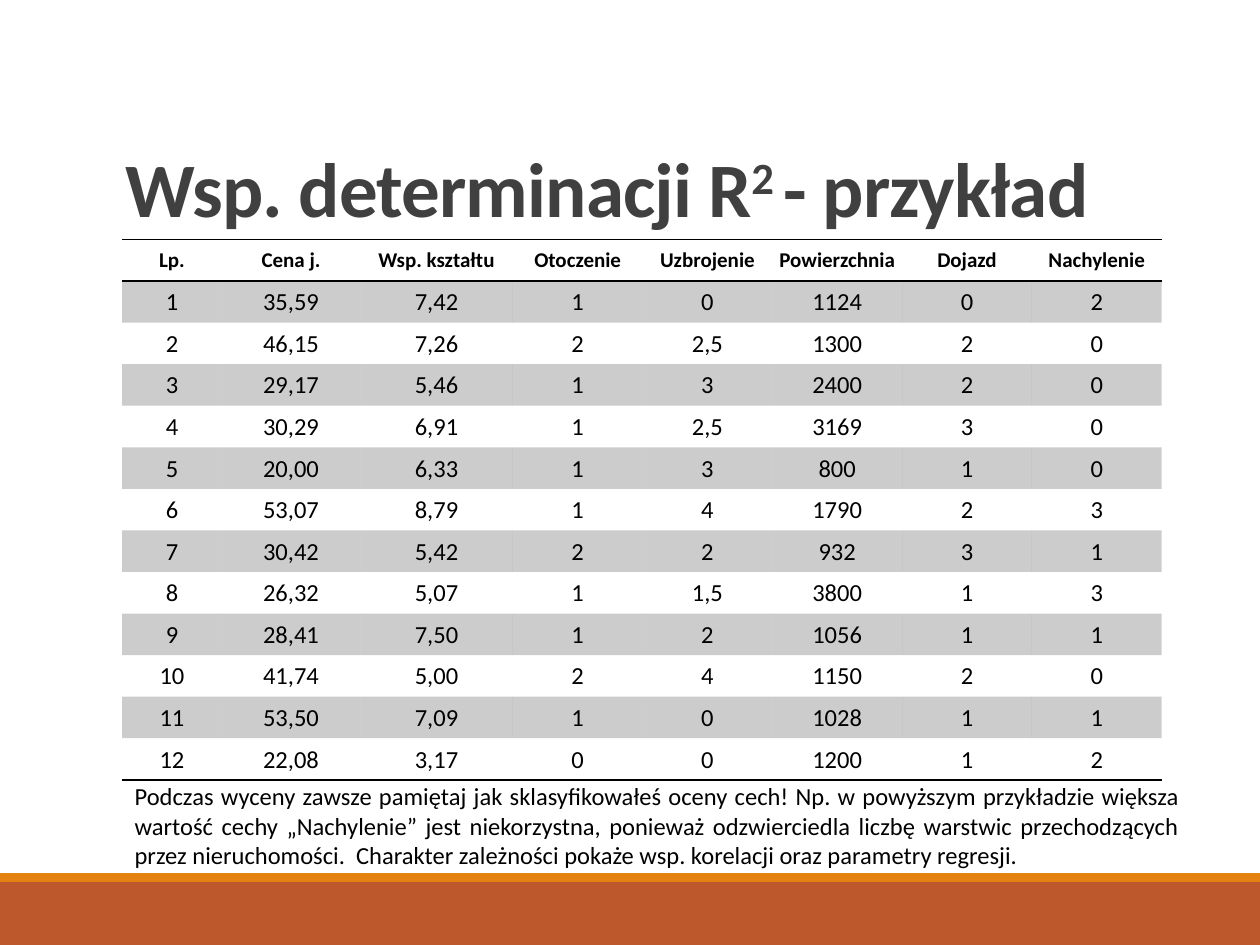
from lxml.etree import SubElement
from pptx import Presentation
from pptx.dml.color import RGBColor
from pptx.enum.shapes import MSO_CONNECTOR, MSO_SHAPE
from pptx.enum.text import MSO_ANCHOR, PP_ALIGN
from pptx.oxml.ns import qn
from pptx.util import Inches, Pt

FONT = "Calibri"
BLACK = "000000"
NO_STYLE = "{2D5ABB26-0587-4C30-8999-92F81FD0307C}"
BANDS = [(7, 0.5, "BD582C"), (6.93, 0.07, "E48312")]
TITLE = [("Wsp. determinacji R", 0), ("2 ", 30000), ("- przykład", 0)]
HEADERS = ["Lp.", "Cena j.", "Wsp. kształtu", "Otoczenie", "Uzbrojenie",
           "Powierzchnia", "Dojazd", "Nachylenie"]
PLOTS = [
    ("35,59", "7,42", "1", "0", "1124", "0", "2"),
    ("46,15", "7,26", "2", "2,5", "1300", "2", "0"),
    ("29,17", "5,46", "1", "3", "2400", "2", "0"),
    ("30,29", "6,91", "1", "2,5", "3169", "3", "0"),
    ("20,00", "6,33", "1", "3", "800", "1", "0"),
    ("53,07", "8,79", "1", "4", "1790", "2", "3"),
    ("30,42", "5,42", "2", "2", "932", "3", "1"),
    ("26,32", "5,07", "1", "1,5", "3800", "1", "3"),
    ("28,41", "7,50", "1", "2", "1056", "1", "1"),
    ("41,74", "5,00", "2", "4", "1150", "2", "0"),
    ("53,50", "7,09", "1", "0", "1028", "1", "1"),
    ("22,08", "3,17", "0", "0", "1200", "1", "2"),
]
COLUMN_WIDTHS = [0.79, 1.1, 1.21] + [1.03] * 5
ROW_HEIGHT = 0.33
NOTE = ("Podczas wyceny zawsze pamiętaj jak sklasyfikowałeś oceny cech! "
        "Np. w powyższym przykładzie większa wartość cechy „Nachylenie” jest "
        "niekorzystna, ponieważ odzwierciedla liczbę warstwic przechodzących "
        "przez nieruchomości.  Charakter zależności pokaże wsp. korelacji "
        "oraz parametry regresji.")


def color(value):
    return RGBColor.from_string(value)


def add_span(para, text, size, bold=False, ink=BLACK):
    span = para.add_run()
    span.text = text
    span.font.name = FONT
    span.font.size = Pt(size)
    span.font.bold = bold
    span.font.color.rgb = color(ink)
    return span


def add_box(page, left, top, width, height):
    box = page.shapes.add_textbox(Inches(left), Inches(top), Inches(width), Inches(height))
    box.text_frame.word_wrap = True
    return box.text_frame


def add_border(cell, side):
    line = SubElement(cell._tc.get_or_add_tcPr(), qn(f"a:{side}"), w=str(Pt(1)))
    fill = SubElement(line, qn("a:solidFill"))
    SubElement(fill, qn("a:srgbClr"), val=BLACK)


def shade(cell):
    cell.fill.solid()
    cell.fill.fore_color.rgb = color(BLACK)
    for tint in cell._tc.tcPr.iter(qn("a:srgbClr")):
        SubElement(tint, qn("a:alpha"), val="20000")


def add_bands(page):
    for top, height, tone in BANDS:
        band = page.shapes.add_shape(
            MSO_SHAPE.RECTANGLE, 0, Inches(top), Inches(10), Inches(height))
        band.shadow.inherit = False
        band.fill.solid()
        band.fill.fore_color.rgb = color(tone)
        band.line.fill.background()


def add_rule(page):
    rule = page.shapes.add_connector(
        MSO_CONNECTOR.STRAIGHT, Inches(0.98), Inches(1.9), Inches(9.15), Inches(1.9))
    rule.line.color.rgb = color("808080")
    rule.line.width = Pt(0.5)
    SubElement(rule._element.spPr, qn("a:effectLst"))


def add_title(page):
    frame = add_box(page, 0.9, 0.31, 8.25, 1.59)
    frame.vertical_anchor = MSO_ANCHOR.BOTTOM
    para = frame.paragraphs[0]
    para.line_spacing = 0.85
    for text, baseline in TITLE:
        properties = add_span(para, text, 44, True, "404040")._r.get_or_add_rPr()
        properties.set("spc", "-50")
        properties.set("baseline", str(baseline))


def add_plot_table(page):
    rows = [HEADERS] + [(str(number), *plot) for number, plot in enumerate(PLOTS, 1)]
    frame = page.shapes.add_table(
        len(rows), len(HEADERS), Inches(0.97), Inches(1.9),
        Inches(sum(COLUMN_WIDTHS)), Inches(ROW_HEIGHT * len(rows)))
    table = frame.table
    table.first_row = False
    table.horz_banding = False
    table._tbl.tblPr.find(qn("a:tableStyleId")).text = NO_STYLE
    for column, width in zip(table.columns, COLUMN_WIDTHS):
        column.width = Inches(width)
    for row_index, values in enumerate(rows):
        is_header = row_index == 0
        table.rows[row_index].height = Inches(ROW_HEIGHT)
        for column_index, value in enumerate(values):
            cell = table.cell(row_index, column_index)
            cell.vertical_anchor = MSO_ANCHOR.MIDDLE
            cell.margin_left = cell.margin_right = cell.margin_top = Inches(0.01)
            cell.margin_bottom = 0
            para = cell.text_frame.paragraphs[0]
            para.alignment = PP_ALIGN.CENTER
            add_span(para, value, 12 if is_header else 14, is_header)
            if is_header:
                add_border(cell, "lnT")
            if is_header or row_index == len(PLOTS):
                add_border(cell, "lnB")
            if row_index % 2:
                shade(cell)
            else:
                cell.fill.background()


def add_note(page):
    para = add_box(page, 0.97, 6.15, 8.49, 0.81).paragraphs[0]
    para.alignment = PP_ALIGN.JUSTIFY
    add_span(para, NOTE, 14)


def main():
    deck = Presentation()
    deck.slide_width = Inches(10)
    deck.slide_height = Inches(7.5)
    page = deck.slides.add_slide(deck.slide_layouts[6])
    add_bands(page)
    add_rule(page)
    add_title(page)
    add_plot_table(page)
    add_note(page)
    deck.save("out.pptx")


if __name__ == "__main__":
    main()
